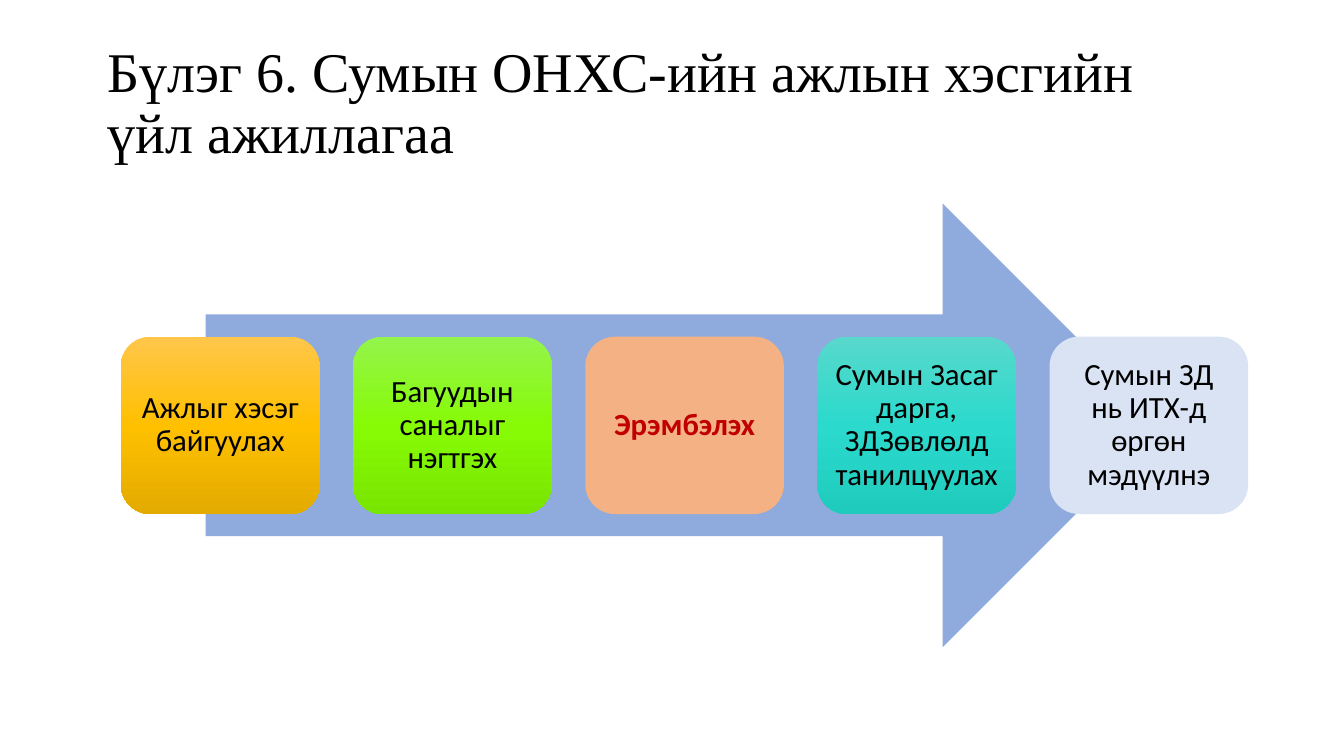
from copy import deepcopy
from dataclasses import dataclass

import pptx
import pptx.dml.color
import pptx.enum.shapes
import pptx.enum.text
import pptx.oxml.ns
import pptx.util
from pptx.util import Inches

HUES = {
    "black": "000000",
    "arrow": "8FAADC",
    "red": "C00000",
    "peach": "F4B183",
    "pale": "DAE3F3",
    "gold top": "FFC64B", "gold": "FFC000", "gold low": "E3AB00",
    "lime top": "94F44C", "lime": "87FB06", "lime low": "78E500",
    "teal top": "58D8CC", "teal": "2BDACC", "teal low": "1ECBBD",
}
KINDS = pptx.enum.shapes.MSO_SHAPE
LEFT, TOP, WIDE, HIGH, PITCH = 1.2, 3.34, 1.97, 1.76, 2.3025


@dataclass
class Step:
    text: str
    fill: tuple[str, ...]
    ink: str = "black"
    bold: bool = False


STEPS = [
    Step("Ажлыг хэсэг байгуулах", ("gold top", "gold", "gold low")),
    Step("Багуудын саналыг нэгтгэх", ("lime top", "lime", "lime low")),
    Step("Эрэмбэлэх", ("peach",), "red", True),
    Step("Сумын Засаг дарга, ЗДЗөвлөлд танилцуулах", ("teal top", "teal", "teal low")),
    Step("Сумын ЗД нь ИТХ-д өргөн мэдүүлнэ", ("pale",)),
]


def hue(name: str) -> pptx.dml.color.RGBColor:
    return pptx.dml.color.RGBColor.from_string(HUES[name])


def paint(shape, names: tuple[str, ...]) -> None:
    """Fill with one colour, or with an even gradient from top to bottom."""
    if len(names) == 1:
        shape.fill.solid()
        shape.fill.fore_color.rgb = hue(names[0])
        return
    shape.fill.gradient()
    shape.fill.gradient_angle = 270
    stops = shape._element.spPr.find(".//" + pptx.oxml.ns.qn("a:gsLst"))
    stops.append(deepcopy(stops[0]))
    for i, (stop, name) in enumerate(zip(shape.fill.gradient_stops, names)):
        stop.position = i / (len(names) - 1)
        stop.color.rgb = hue(name)


def draw(slide, kind, box: tuple[float, ...], names: tuple[str, ...]):
    shape = slide.shapes.add_shape(kind, *map(Inches, box))
    shape.shadow.inherit = False
    shape.line.fill.background()
    paint(shape, names)
    return shape


def write(frame, text: str, font: str, size: int, ink: str, bold: bool = False):
    frame.word_wrap = True
    frame.vertical_anchor = pptx.enum.text.MSO_ANCHOR.MIDDLE
    para = frame.paragraphs[0]
    para.line_spacing = 0.9
    run = para.add_run()
    run.text = text
    run.font.name = font
    run.font.size = pptx.util.Pt(size)
    run.font.bold = bold
    run.font.color.rgb = hue(ink)
    return para


def card(slide, step: Step, left: float) -> None:
    shape = draw(slide, KINDS.ROUNDED_RECTANGLE, (left, TOP, WIDE, HIGH), step.fill)
    frame = shape.text_frame
    frame.margin_left = frame.margin_right = Inches(0.09)
    frame.margin_top = frame.margin_bottom = Inches(0.09)
    para = write(frame, step.text, "Calibri", 22, step.ink, step.bold)
    para.alignment = pptx.enum.text.PP_ALIGN.CENTER


def main() -> None:
    deck = pptx.Presentation()
    deck.slide_width, deck.slide_height = Inches(13.33), Inches(7.5)
    slide = deck.slides.add_slide(deck.slide_layouts[6])

    # Title
    title = slide.shapes.add_textbox(*map(Inches, (0.97, 0.31, 11, 1.46)))
    write(title.text_frame, "Бүлэг 6. Сумын ОНХС-ийн ажлын хэсгийн үйл ажиллагаа",
          "Times New Roman", 40, "black")

    # Arrow behind the steps
    draw(slide, KINDS.RIGHT_ARROW, (2.04, 2.02, 9.51, 4.4), ("arrow",))

    # Steps
    for i, step in enumerate(STEPS):
        card(slide, step, LEFT + i * PITCH)

    deck.save("out.pptx")


if __name__ == "__main__":
    main()
